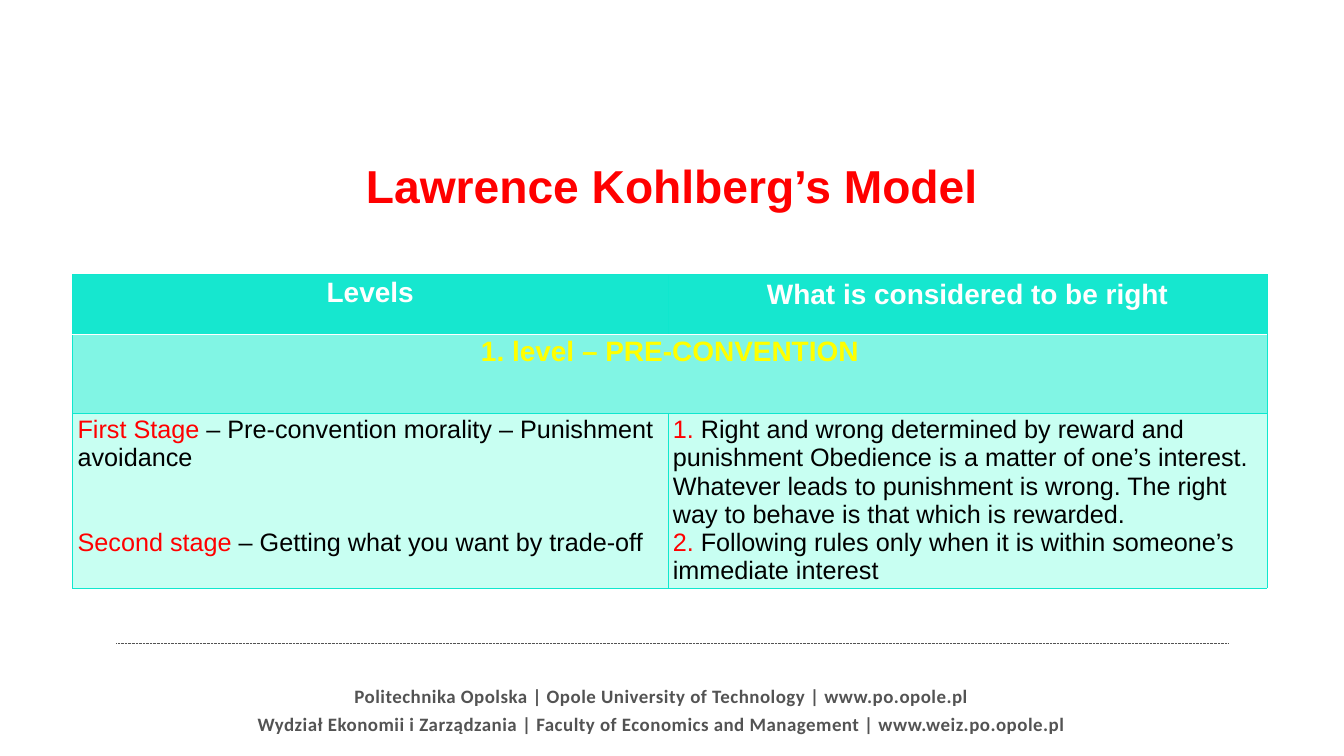
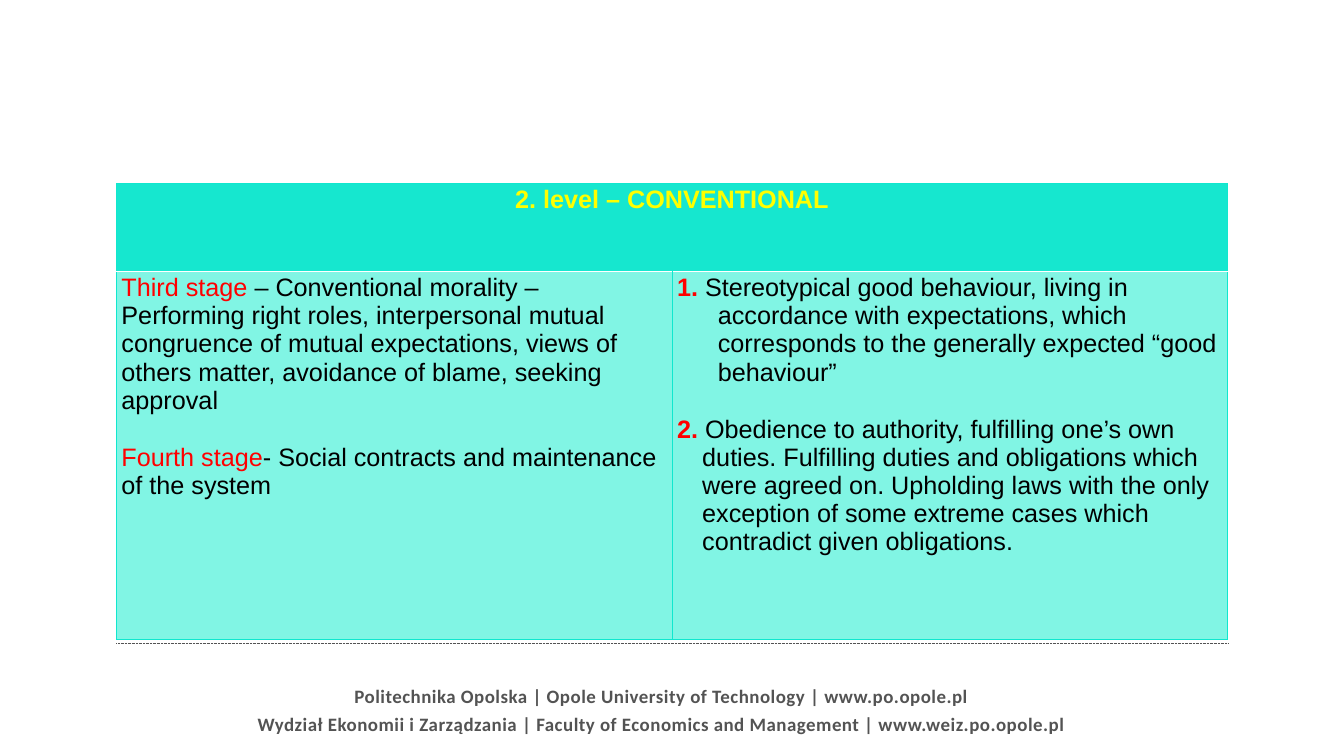
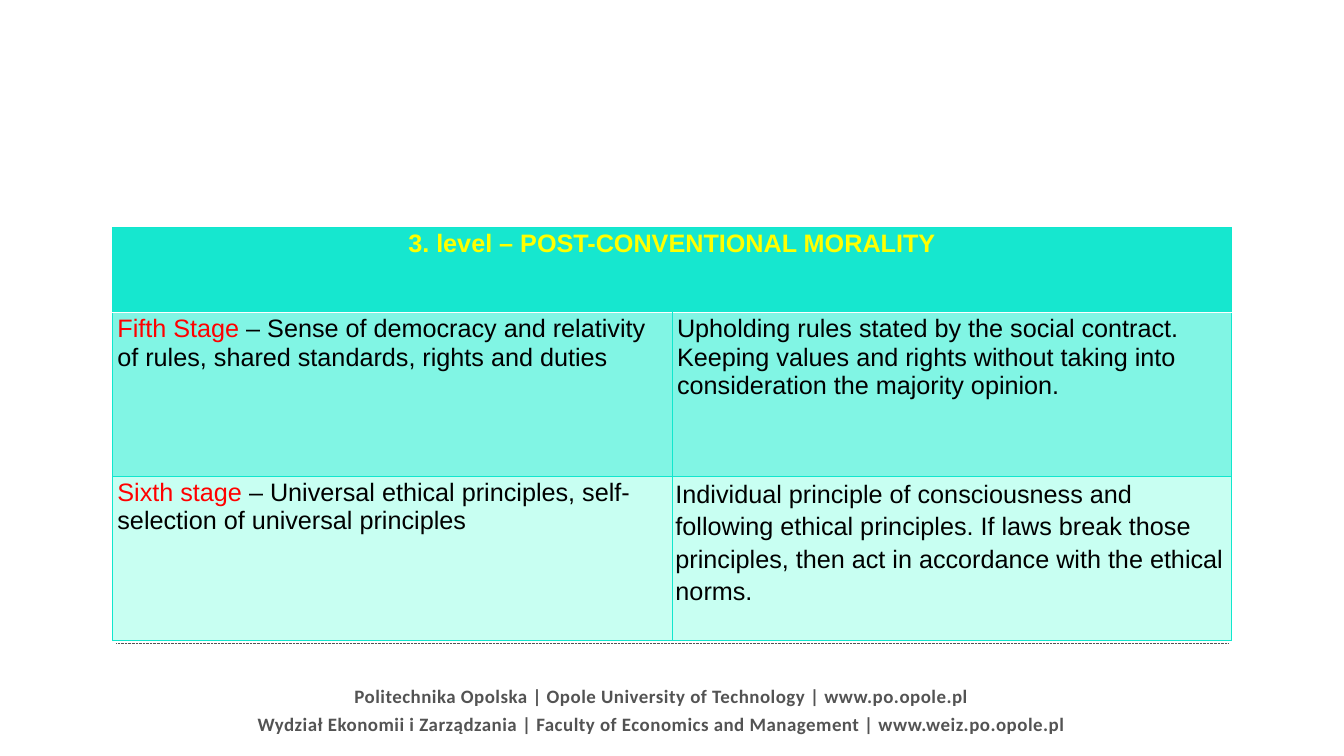
from lxml import etree
from pptx import Presentation
from pptx.dml.color import RGBColor
from pptx.enum.dml import MSO_LINE
from pptx.enum.shapes import MSO_CONNECTOR
from pptx.enum.text import MSO_ANCHOR, MSO_AUTO_SIZE, PP_ALIGN
from pptx.oxml.ns import qn
from pptx.util import Pt

# Content: a row of strings is a heading, one string spans the whole row.
# Stage paragraphs are (lead, text, options).
TITLE = "Lawrence Kohlberg’s Model"
FOOTER = [
    "Politechnika Opolska | Opole University of Technology | www.po.opole.pl",
    "Wydział Ekonomii i Zarządzania | Faculty of Economics and Management | www.weiz.po.opole.pl",
]
LEVELS = [
    {
        "title": TITLE, "left": 103.7, "top": 392.4, "heading_size": 40,
        "columns": [850.3, 856.1], "heights": [85, 113, 250], "loose": (0, 1),
        "rows": [
            ["Levels", "What is considered to be right"],
            ["1. level – PRE-CONVENTION"],
            [
                [("First Stage ", "– Pre-convention morality – Punishment avoidance", {}),
                 ("Second stage ", "– Getting what you want by trade-off", {"before": 80})],
                [("1. ", "Right and wrong determined by reward and punishment Obedience is "
                  "a matter of one’s interest. Whatever leads to punishment is wrong. "
                  "The right way to behave is that which is rewarded.", {}),
                 ("2. ", "Following rules only when it is within someone’s immediate interest", {})],
            ],
        ],
    },
    {
        "title": None, "left": 166.3, "top": 262, "heading_size": 36,
        "columns": [793.7, 793.7], "heights": [125.4, 526.5], "loose": None,
        "rows": [
            ["2. level – CONVENTIONAL"],
            [
                [("Third stage ", "– Conventional morality – Performing right roles, "
                  "interpersonal mutual congruence of mutual expectations, views of others "
                  "matter, avoidance of blame, seeking approval", {}),
                 ("Fourth stage", "- Social contracts and maintenance of the system",
                  {"before": 41})],
                [("1. ", "Stereotypical good behaviour, living in accordance with expectations, "
                  "which corresponds to the generally expected “good behaviour”",
                  {"hang": 58.3, "bold_lead": True}),
                 ("2. ", "Obedience to authority, fulfilling one’s own duties. Fulfilling duties "
                  "and obligations which were agreed on. Upholding laws with the only exception "
                  "of some extreme cases which contradict given obligations.",
                  {"hang": 36, "bold_lead": True, "before": 41})],
            ],
        ],
    },
    {
        "title": None, "left": 160.5, "top": 324.7, "heading_size": 36,
        "columns": [799.5, 799.5], "heights": [121.7, 234, 234], "loose": (2, 1),
        "rows": [
            ["3. level – POST-CONVENTIONAL MORALITY"],
            [
                [("Fifth Stage ", "– Sense of democracy and relativity of rules, "
                  "shared standards, rights and duties", {})],
                [("", "Upholding rules stated by the social contract. Keeping values and rights "
                  "without taking into consideration the majority opinion.", {})],
            ],
            [
                [("Sixth stage", " – Universal ethical principles, "
                  "self-selection of universal principles", {})],
                [("", "Individual principle of consciousness and following ethical principles. "
                  "If laws break those principles, then act in accordance with the ethical norms.",
                  {})],
            ],
        ],
    },
]

# Shared style
COLORS = {
    "accent": "FF0000", "text": "000000", "column": "FFFFFF", "level": "FFFF00",
    "footer": "535353", "border": "10E7CE", "divider": "FFFFFF",
}
ROW_FILLS = ["16E7CF", "81F5E4", "C8FFF2"]
STAGE_SIZE = 36


def rgb(name):
    return RGBColor.from_string(COLORS[name])


def set_font(font, size, color=None, bold=False, face="Arial"):
    font.name, font.size, font.bold = face, Pt(size), bold
    if color:
        font.color.rgb = rgb(color)


def set_insets(frame, inset):
    frame.margin_left = frame.margin_right = Pt(inset)
    frame.margin_top = frame.margin_bottom = Pt(inset)


def set_borders(cell, row):
    """Teal edges, with a white divider under the first row."""
    dividers = {0: "lnB", 1: "lnT"}
    properties = cell._tc.get_or_add_tcPr()
    for position, edge in enumerate(("lnL", "lnR", "lnT", "lnB")):
        divider = dividers.get(row) == edge
        line = etree.Element(qn("a:" + edge), w=str(Pt(2 if divider else 0.75)))
        fill = etree.SubElement(line, qn("a:solidFill"))
        color = COLORS["divider" if divider else "border"]
        etree.SubElement(fill, qn("a:srgbClr"), val=color)
        properties.insert(position, line)


def write_heading(cell, heading, size, color):
    paragraph = cell.text_frame.paragraphs[0]
    paragraph.text = heading
    paragraph.alignment = PP_ALIGN.CENTER
    set_font(paragraph.font, size, color, bold=True)


def write_stages(cell, stages):
    frame = cell.text_frame
    for index, (lead, text, options) in enumerate(stages):
        paragraph = frame.add_paragraph() if index else frame.paragraphs[0]
        if "hang" in options:
            hang = Pt(options["hang"])
            properties = paragraph._p.get_or_add_pPr()
            properties.set("marL", str(hang))
            properties.set("indent", str(-hang))
        if "before" in options:
            paragraph.space_before = Pt(options["before"])
        set_font(paragraph.font, STAGE_SIZE)
        for words, color in ((lead, "accent"), (text, "text")):
            if words:
                run = paragraph.add_run()
                run.text = words
                run.font.color.rgb = rgb(color)
                if color == "accent" and options.get("bold_lead"):
                    run.font.bold = True


def add_title(slide, text):
    title = slide.shapes.title
    title.left, title.top, title.width, title.height = Pt(52.6), Pt(165.6), Pt(1814.4), Pt(141.8)
    frame = title.text_frame
    frame.text = text
    frame.auto_size = MSO_AUTO_SIZE.NONE
    frame.vertical_anchor = MSO_ANCHOR.BOTTOM
    set_insets(frame, 4)
    frame.paragraphs[0].alignment = PP_ALIGN.CENTER
    set_font(frame.paragraphs[0].font, 66, "accent", bold=True)


def add_level_table(slide, level):
    columns, heights = level["columns"], level["heights"]
    table = slide.shapes.add_table(
        len(heights), len(columns), Pt(level["left"]), Pt(level["top"]),
        Pt(sum(columns)), Pt(sum(heights))).table
    table.first_row = table.horz_banding = False
    for column, width in zip(table.columns, columns):
        column.width = Pt(width)
    for row, contents in enumerate(level["rows"]):
        table.rows[row].height = Pt(heights[row])
        for column in range(len(columns)):
            cell = table.cell(row, column)
            cell.fill.solid()
            cell.fill.fore_color.rgb = RGBColor.from_string(ROW_FILLS[row])
            set_borders(cell, row)
        spans = len(contents) == 1
        if spans:
            table.cell(row, 0).merge(table.cell(row, len(columns) - 1))
        for column, content in enumerate(contents):
            cell = table.cell(row, column)
            if isinstance(content, str):
                write_heading(cell, content, level["heading_size"], "level" if spans else "column")
            else:
                write_stages(cell, content)
    if level["loose"]:
        cell = table.cell(*level["loose"])
        cell.margin_left = cell.margin_right = Pt(5)
        cell.margin_top = cell.margin_bottom = Pt(0)
        cell.text_frame.paragraphs[0].line_spacing = 1.15


def add_master_footer(prs, slide):
    """Draw the footer and its rule, then move them to the master."""
    footer = slide.shapes.add_textbox(Pt(333.4), Pt(974.9), Pt(1222.6), Pt(72))
    frame = footer.text_frame
    frame.text = "\n".join(FOOTER)
    frame.word_wrap = False
    frame.auto_size = MSO_AUTO_SIZE.SHAPE_TO_FIT_TEXT
    frame.vertical_anchor = MSO_ANCHOR.MIDDLE
    set_insets(frame, 4)
    for paragraph in frame.paragraphs:
        paragraph.alignment = PP_ALIGN.CENTER
        paragraph.line_spacing = 1.2
        set_font(paragraph.font, 27, "footer", bold=True, face="Calibri")
        for run in paragraph.runs:
            run._r.get_or_add_rPr().set("spc", "70")

    rule = slide.shapes.add_connector(
        MSO_CONNECTOR.STRAIGHT, Pt(166.3), Pt(918.7), Pt(1753.9), Pt(918.7))
    rule.line.color.rgb = rgb("footer")
    rule.line.width = Pt(1)
    rule.line.dash_style = MSO_LINE.ROUND_DOT
    etree.SubElement(rule.element.spPr, qn("a:effectLst"))

    for number, part in enumerate((footer, rule), start=101):
        part.element.xpath(".//p:cNvPr")[0].set("id", str(number))
        prs.slide_master.element.cSld.spTree.append(part.element)


def main():
    prs = Presentation()
    prs.slide_width, prs.slide_height = Pt(1920), Pt(1080)
    title_only, blank = prs.slide_layouts[5], prs.slide_layouts[6]
    for level in LEVELS:
        slide = prs.slides.add_slide(title_only if level["title"] else blank)
        if level["title"]:
            add_title(slide, level["title"])
        add_level_table(slide, level)
    add_master_footer(prs, prs.slides[0])
    prs.save("out.pptx")


if __name__ == "__main__":
    main()
